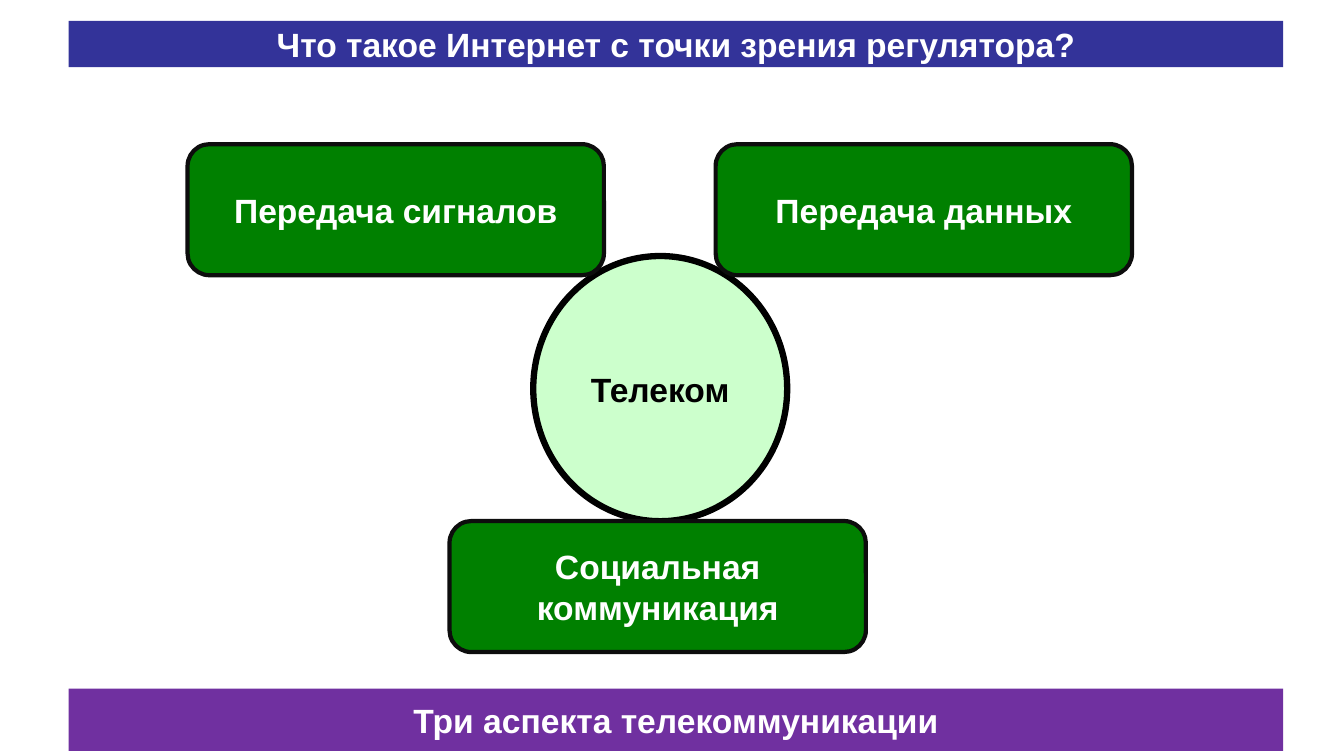
from pptx import Presentation
from pptx.dml.color import RGBColor
from pptx.enum.shapes import MSO_SHAPE
from pptx.enum.text import MSO_ANCHOR, PP_ALIGN
from pptx.util import Pt

BAR = MSO_SHAPE.RECTANGLE
CIRCLE = MSO_SHAPE.OVAL
ROUNDED = MSO_SHAPE.FLOWCHART_ALTERNATE_PROCESS
MIDDLE = MSO_ANCHOR.MIDDLE
CENTER = PP_ALIGN.CENTER

WHITE = RGBColor(0xFF, 0xFF, 0xFF)
BLACK = RGBColor(0x00, 0x00, 0x00)
NEAR_BLACK = RGBColor(0x0D, 0x0D, 0x0D)
INDIGO = RGBColor(0x33, 0x33, 0x99)
PURPLE = RGBColor(0x70, 0x30, 0xA0)
GREEN = RGBColor(0x00, 0x80, 0x00)
PALE_GREEN = RGBColor(0xCC, 0xFF, 0xCC)

BAR_LEFT, BAR_WIDTH = 49, 867.6
ASPECT_WIDTH, ASPECT_HEIGHT = 297.4, 93.6

deck = Presentation()
deck.slide_width, deck.slide_height = Pt(960), Pt(540)
page = deck.slides.add_slide(deck.slide_layouts[6])


def add_label(text, *, kind, left, top, width, height, fill,
              color=WHITE, line_color=None, line_width=0):
    """Draw a filled shape with centred bold text; lengths in points."""
    box = page.shapes.add_shape(kind, Pt(left), Pt(top), Pt(width), Pt(height))
    box.shadow.inherit = False
    box.fill.solid()
    box.fill.fore_color.rgb = fill
    if line_color is None:
        box.line.fill.background()
    else:
        box.line.color.rgb = line_color
        box.line.width = Pt(line_width)
    frame = box.text_frame
    frame.word_wrap = True
    frame.vertical_anchor = MIDDLE
    para = frame.paragraphs[0]
    para.alignment = CENTER
    span = para.add_run()
    span.text = text
    span.font.name = "Arial"
    span.font.size = Pt(24)
    span.font.bold = True
    span.font.color.rgb = color


add_label("Что такое Интернет с точки зрения регулятора?", kind=BAR,
          left=BAR_LEFT, top=15, width=BAR_WIDTH, height=33, fill=INDIGO)
add_label("Телеком", kind=CIRCLE, left=380.9, top=182.9, width=181.4, height=189.4,
          fill=PALE_GREEN, color=BLACK, line_color=BLACK, line_width=4.5)
add_label("Три аспекта телекоммуникации", kind=BAR,
          left=BAR_LEFT, top=491.8, width=BAR_WIDTH, height=44.6, fill=PURPLE)

aspects = [
    ("Передача сигналов", 134, 103),
    ("Передача данных", 511.2, 103),
    ("Социальная коммуникация", 321.1, 372.2),
]
for text, left, top in aspects:
    add_label(text, kind=ROUNDED, left=left, top=top, width=ASPECT_WIDTH,
              height=ASPECT_HEIGHT, fill=GREEN, line_color=NEAR_BLACK, line_width=3)

deck.save("out.pptx")
